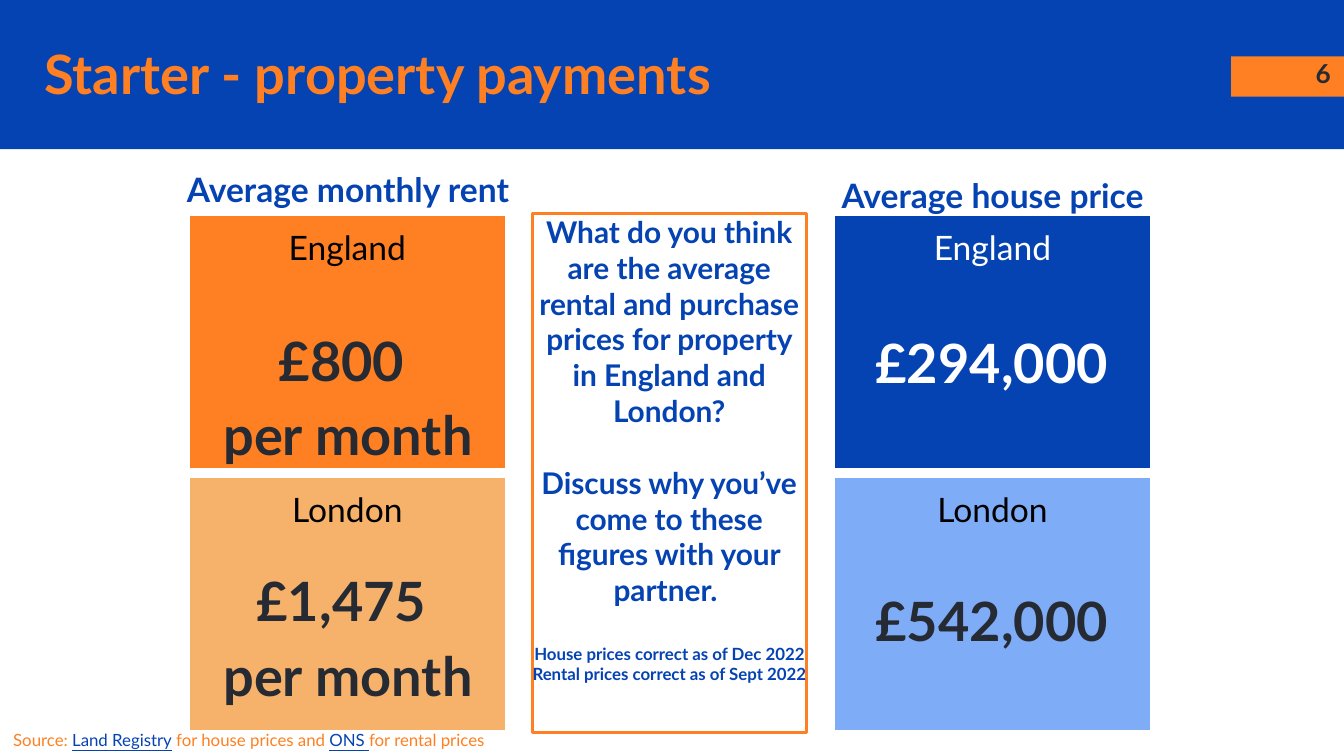
"""Build the "Starter - property payments" slide comparing rents and house prices."""
from dataclasses import dataclass

from pptx import Presentation
from pptx.dml.color import RGBColor
from pptx.enum.shapes import MSO_SHAPE
from pptx.enum.text import MSO_ANCHOR, PP_ALIGN
from pptx.util import Inches, Pt

RECTANGLE = MSO_SHAPE.RECTANGLE
TOP, MIDDLE = MSO_ANCHOR.TOP, MSO_ANCHOR.MIDDLE
LEFT, CENTER, RIGHT = PP_ALIGN.LEFT, PP_ALIGN.CENTER, PP_ALIGN.RIGHT


@dataclass(frozen=True)
class Theme:
    font: str = "Lato"
    blue: str = "0543B3"
    pale_blue: str = "7EACF7"
    orange: str = "FF8022"
    pale_orange: str = "F6B26B"
    dark: str = "262A33"
    black: str = "000000"
    white: str = "FFFFFF"
    display: int = 29
    heading: int = 18
    body: int = 16
    number: int = 14
    small: int = 9


theme = Theme()
presentation = Presentation()
presentation.slide_width = Inches(10)
presentation.slide_height = Inches(10 * 9 / 16)
slide = presentation.slides.add_slide(presentation.slide_layouts[6])


def add_rectangle(left, top, width, height, fill=None, line=None, line_width=0):
    shape = slide.shapes.add_shape(
        RECTANGLE, Inches(left), Inches(top), Inches(width), Inches(height))
    shape.shadow.inherit = False
    if fill:
        shape.fill.solid()
        shape.fill.fore_color.rgb = RGBColor.from_string(fill)
    else:
        shape.fill.background()
    if line:
        shape.line.color.rgb = RGBColor.from_string(line)
        shape.line.width = Pt(line_width)
    else:
        shape.line.fill.background()
    return shape


def write(shape, text, size, color, bold=True, align=CENTER, inset=0, anchor=TOP, spacing=1):
    frame = shape.text_frame
    frame.word_wrap = True
    frame.vertical_anchor = anchor
    frame.margin_left = frame.margin_right = Inches(inset)
    frame.margin_top = frame.margin_bottom = Inches(inset)
    frame.text = text
    for paragraph in frame.paragraphs:
        paragraph.alignment = align
        paragraph.line_spacing = spacing
        for run in paragraph.runs:
            run.font.name = theme.font
            run.font.size = Pt(size)
            run.font.bold = bold
            run.font.color.rgb = RGBColor.from_string(color)
    return frame


add_rectangle(0, 0, 10, 1.11, theme.blue)
add_rectangle(9.16, 0.42, 0.84, 0.3, theme.orange)

labels = [
    (9.4, 0.33, 0.6, 0.43, "6", theme.number, theme.dark, RIGHT, TOP),
    (0.23, 0.26, 6.24, 0.56, "Starter - property payments",
     theme.display, theme.orange, LEFT, MIDDLE),
]
for left, top, width, height, text, size, color, align, anchor in labels:
    box = slide.shapes.add_textbox(Inches(left), Inches(top), Inches(width), Inches(height))
    write(box, text, size, color, align=align, inset=0.1, anchor=anchor)

question_box = add_rectangle(3.96, 1.59, 2.04, 3.86, line=theme.orange, line_width=1.5)
question = write(
    question_box,
    "What do you think are the average rental and purchase prices for property "
    "in England and London?\n"
    "Discuss why you’ve come to these figures with your partner. \n"
    "House prices correct as of Dec 2022\n"
    "Rental prices correct as of Sept 2022",
    theme.body, theme.blue)
for paragraph in question.paragraphs[1:3]:
    paragraph.space_before = Pt(19.2)
for paragraph in question.paragraphs[2:]:
    paragraph.runs[0].font.size = Pt(theme.small)

cards = [
    (1.4, 3.54, "London", theme.pale_orange, theme.black),
    (1.4, 1.59, "England", theme.orange, theme.black),
    (6.2, 1.59, "England", theme.blue, theme.white),
    (6.2, 3.54, "London", theme.pale_blue, theme.black),
]
for left, top, place, fill, color in cards:
    card = add_rectangle(left, top, 2.37, 1.91, fill, theme.white, 2.25)
    write(card, place, theme.heading, color, bold=False, inset=0.1)

figures = [
    (1.21, 1.21, 2.76, "Average monthly rent", theme.heading, theme.blue),
    (5.91, 1.26, 2.95, "Average house price", theme.heading, theme.blue),
    (1.6, 2.36, 1.98, "£800 \nper month", theme.display, theme.dark),
    (1.6, 4.15, 1.98, "£1,475 \nper month", theme.display, theme.dark),
    (6.39, 2.38, 1.98, "£294,000", theme.display, theme.white),
    (6.39, 4.3, 1.98, "£542,000", theme.display, theme.dark),
]
for left, top, width, text, size, color in figures:
    box = slide.shapes.add_textbox(Inches(left), Inches(top), Inches(width), Inches(0.69))
    write(box, text, size, color, spacing=1.15)

source_box = slide.shapes.add_textbox(Inches(0), Inches(5.35), Inches(5.94), Inches(0.35))
source = write(source_box, "Source: ", theme.small, theme.orange,
               bold=False, align=LEFT, inset=0.1)
source_parts = [
    ("Land Registry", True),
    (" for house prices and ", False),
    ("ONS ", True),
    ("for rental prices", False),
]
for text, is_reference in source_parts:
    run = source.paragraphs[0].add_run()
    run.text = text
    run.font.name = theme.font
    run.font.size = Pt(theme.small)
    run.font.underline = is_reference
    run.font.color.rgb = RGBColor.from_string(theme.blue if is_reference else theme.orange)

presentation.save("out.pptx")
